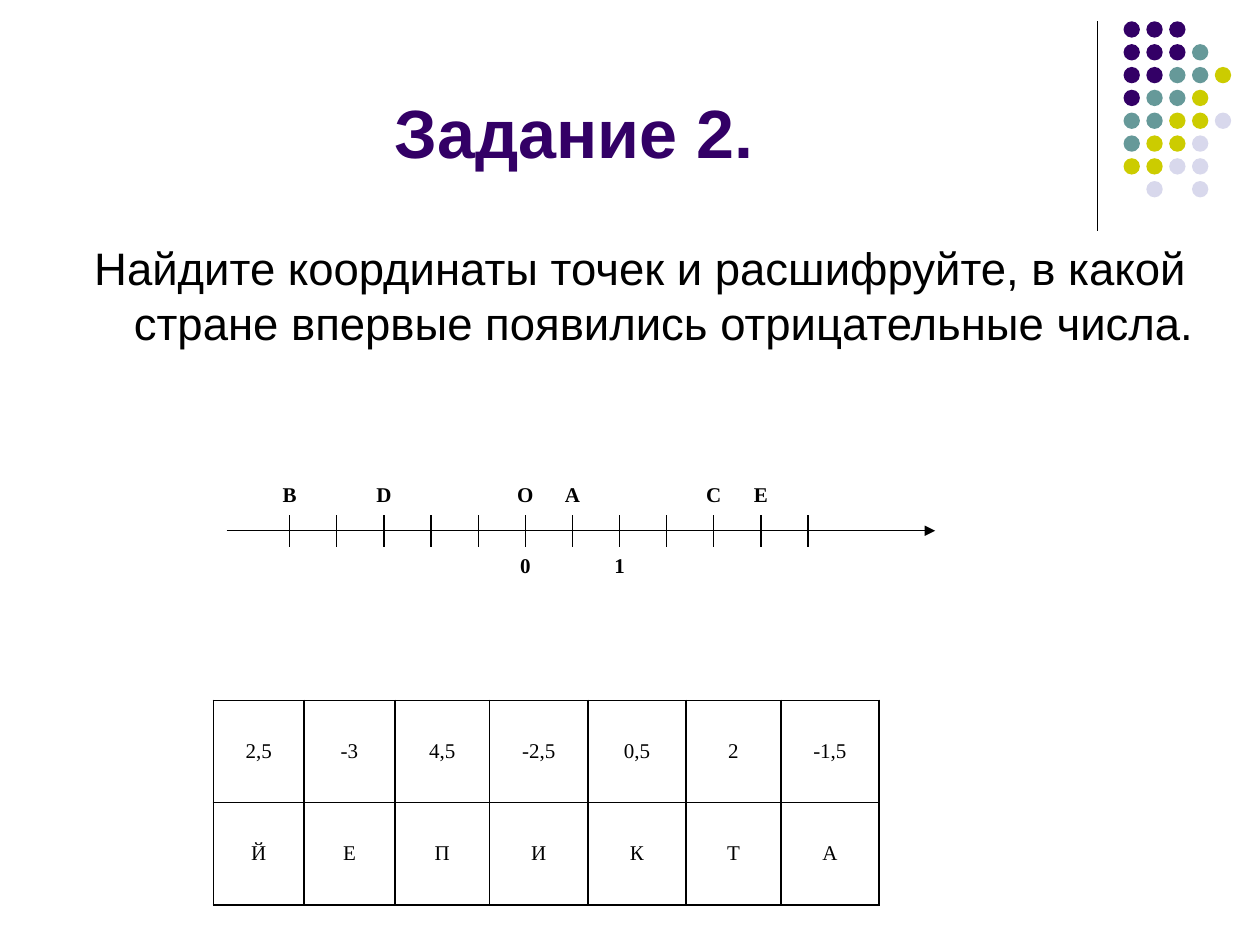
"""Build the number line exercise slide with its decoding table."""
import pptx
import pptx.dml.color
import pptx.enum.shapes
import pptx.enum.text
import pptx.oxml
import pptx.oxml.ns
import pptx.util

Cm = pptx.util.Cm
Pt = pptx.util.Pt
ALIGN = pptx.enum.text.PP_ALIGN
ANCHOR = pptx.enum.text.MSO_ANCHOR
SHAPE = pptx.enum.shapes.MSO_SHAPE
CONNECTOR = pptx.enum.shapes.MSO_CONNECTOR


def color(hex_string):
    return pptx.dml.color.RGBColor.from_string(hex_string)


class SlideBuilder:
    black = "000000"
    heading = "330066"
    sans = "Arial"
    serif = "Times New Roman"
    line_width = 0.75
    border_width = 1

    def __init__(self, slide):
        self.slide = slide

    def add_centered_run(self, paragraph, text, size, font, hex_string, bold=False):
        paragraph.alignment = ALIGN.CENTER
        run = paragraph.add_run()
        run.text = text
        run.font.size = Pt(size)
        run.font.name = font
        run.font.bold = bold
        run.font.color.rgb = color(hex_string)

    def text(self, left, top, width, height, text, size, font,
             hex_string=black, bold=False, anchor=ANCHOR.TOP):
        shape = self.slide.shapes.add_textbox(Cm(left), Cm(top), Cm(width), Cm(height))
        frame = shape.text_frame
        frame.word_wrap = True
        frame.vertical_anchor = anchor
        paragraph = frame.paragraphs[0]
        self.add_centered_run(paragraph, text, size, font, hex_string, bold)
        return paragraph

    def hanging_text(self, left, top, width, height, text, size, hang):
        paragraph = self.text(left, top, width, height, text, size, self.sans)
        paragraph.space_before = Pt(5)
        properties = paragraph._p.get_or_add_pPr()
        properties.set("marL", str(Cm(hang)))
        properties.set("indent", str(-Cm(hang)))

    def label(self, center, middle, text):
        self.text(center - 0.5, middle - 0.4, 1, 0.8, text, 12, self.serif,
                  bold=True, anchor=ANCHOR.MIDDLE)

    def line(self, x1, y1, x2, y2, arrow=False):
        connector = self.slide.shapes.add_connector(
            CONNECTOR.STRAIGHT, Cm(x1), Cm(y1), Cm(x2), Cm(y2))
        connector.line.color.rgb = color(self.black)
        connector.line.width = Pt(self.line_width)
        if arrow:
            tail = pptx.oxml.parse_xml(
                f'<a:tailEnd {pptx.oxml.ns.nsdecls("a")} type="triangle"/>')
            connector.line._get_or_add_ln().append(tail)
        effects = pptx.oxml.parse_xml(f'<a:effectLst {pptx.oxml.ns.nsdecls("a")}/>')
        connector._element.spPr.append(effects)

    def dot(self, left, top, diameter, hex_string):
        shape = self.slide.shapes.add_shape(
            SHAPE.OVAL, Cm(left), Cm(top), Cm(diameter), Cm(diameter))
        shape.shadow.inherit = False
        shape.fill.solid()
        shape.fill.fore_color.rgb = color(hex_string)
        shape.line.fill.background()

    def border(self, cell):
        properties = cell._tc.get_or_add_tcPr()
        for index, side in enumerate(("lnL", "lnR", "lnT", "lnB")):
            properties.insert(index, pptx.oxml.parse_xml(
                f'<a:{side} {pptx.oxml.ns.nsdecls("a")} w="{Pt(self.border_width)}">'
                f'<a:solidFill><a:srgbClr val="{self.black}"/></a:solidFill></a:{side}>'))

    def table(self, left, top, widths, row_height, rows):
        table = self.slide.shapes.add_table(
            len(rows), len(widths), Cm(left), Cm(top),
            Cm(sum(widths)), Cm(row_height * len(rows))).table
        table.first_row = False
        table.horz_banding = False
        for column, width in zip(table.columns, widths):
            column.width = Cm(width)
        for row, values in zip(table.rows, rows):
            row.height = Cm(row_height)
            for cell, value in zip(row.cells, values):
                cell.fill.background()
                cell.vertical_anchor = ANCHOR.MIDDLE
                self.add_centered_run(
                    cell.text_frame.paragraphs[0], value, 12, self.serif, self.black)
                self.border(cell)


def add_dots(builder):
    colors = {"P": "330066", "T": "669999", "Y": "CCCC00", "L": "D8D8EC"}
    pattern = ("PPP", "PPPT", "PPTTY", "PTTY", "TTYYL", "TYYL", "YYLL", " L L")
    for row, codes in enumerate(pattern):
        for column, code in enumerate(codes):
            if code in colors:
                builder.dot(22.65 + 0.46 * column, 0.43 + 0.46 * row, 0.33, colors[code])


def add_number_line(builder):
    points = {0: "В", 2: "D", 5: "О", 6: "А", 9: "С", 10: "E"}
    numbers = {5: "0", 7: "1"}
    builder.line(4.57, 10.7, 18.85, 10.7, arrow=True)
    for index in range(12):
        x = 5.84 + 0.95 * index
        builder.line(x, 10.39, x, 11.02)
        if index in points:
            builder.label(x, 9.96, points[index])
        if index in numbers:
            builder.label(x, 11.4, numbers[index])


def main():
    presentation = pptx.Presentation()
    presentation.slide_width = Cm(25.4)
    presentation.slide_height = Cm(19.05)
    builder = SlideBuilder(presentation.slides.add_slide(presentation.slide_layouts[6]))
    builder.line(22.12, 0.43, 22.12, 4.65)
    add_dots(builder)
    builder.text(1.1, 0, 20.95, 3.6, "Задание 2.", 39, builder.sans,
                 builder.heading, bold=True, anchor=ANCHOR.BOTTOM)
    builder.hanging_text(
        1.3, 4.72, 23.24, 12.24,
        "Найдите координаты точек и расшифруйте, в какой стране "
        "впервые появились отрицательные числа.", 26, 0.95)
    add_number_line(builder)
    builder.table(4.3, 14.12, (1.83, 1.83, 1.91, 1.98, 1.98, 1.91, 1.98), 2.06, (
        ("2,5", "-3", "4,5", "-2,5", "0,5", "2", "-1,5"),
        ("Й", "Е", "П", "И", "К", "Т", "А")))
    presentation.save("out.pptx")


if __name__ == "__main__":
    main()
